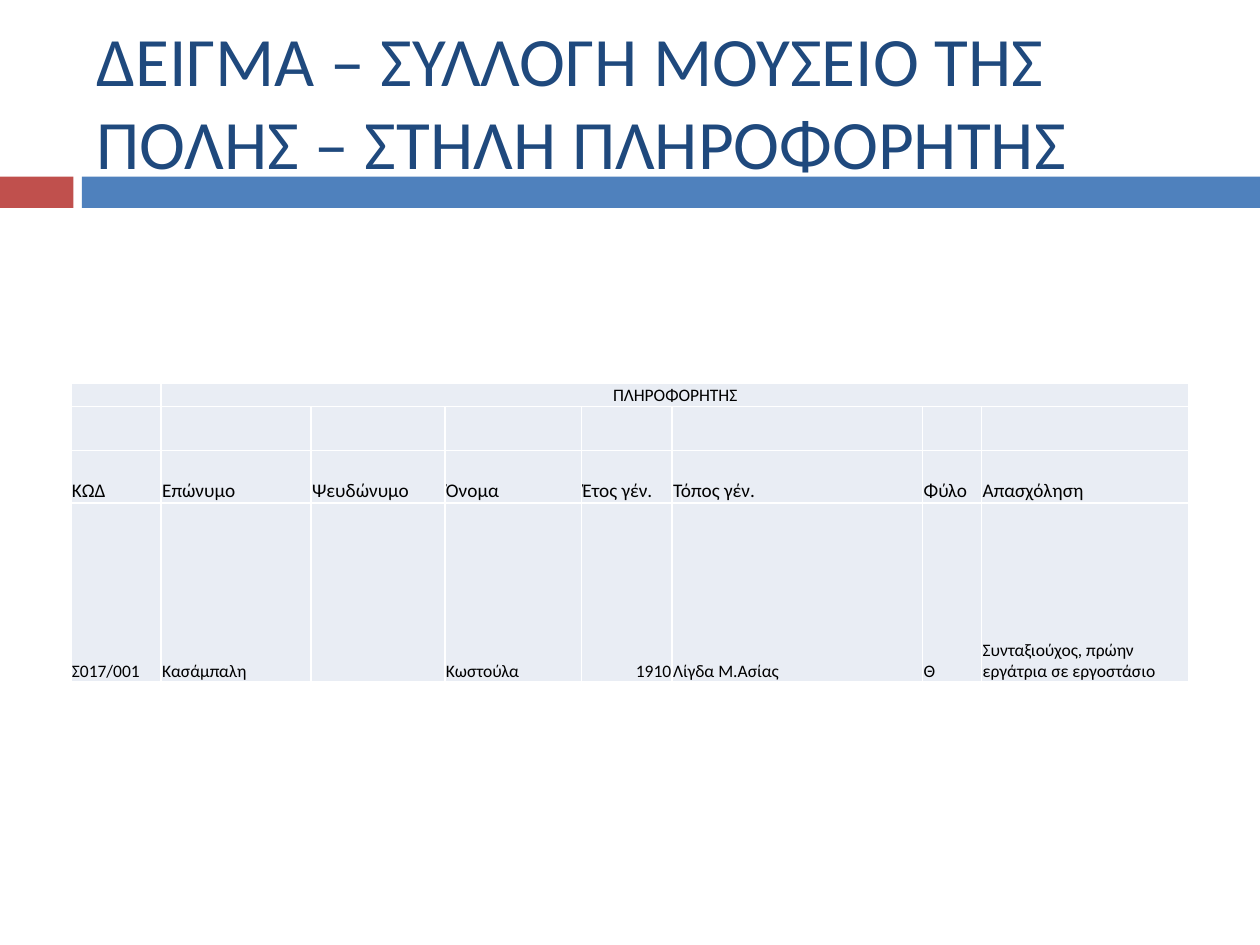
from dataclasses import dataclass

from lxml import etree
from pptx import Presentation
from pptx.dml.color import RGBColor
from pptx.enum.shapes import MSO_SHAPE
from pptx.enum.text import MSO_ANCHOR, MSO_AUTO_SIZE, PP_ALIGN
from pptx.oxml.ns import qn
from pptx.util import Cm, Pt

RECTANGLE = MSO_SHAPE.RECTANGLE
MIDDLE, BOTTOM = MSO_ANCHOR.MIDDLE, MSO_ANCHOR.BOTTOM
LEFT, CENTER, RIGHT = PP_ALIGN.LEFT, PP_ALIGN.CENTER, PP_ALIGN.RIGHT
NO_AUTO_SIZE = MSO_AUTO_SIZE.NONE


@dataclass
class Theme:
    font: str = "Calibri"
    title: str = "1F497D"
    text: str = "000000"
    red: str = "C0504D"
    blue: str = "4F81BD"
    cell: str = "E9EDF4"
    border: str = "FFFFFF"
    title_size: float = 39.6
    header_size: float = 11
    cell_size: float = 10
    border_width: float = 1


theme = Theme()


def format_runs(paragraph, size, color):
    for run in paragraph.runs:
        run.font.name = theme.font
        run.font.size = Pt(size)
        run.font.bold = False
        run.font.color.rgb = RGBColor.from_string(color)


def add_borders(cell):
    properties = cell._tc.get_or_add_tcPr()
    for side in ("a:lnL", "a:lnR", "a:lnT", "a:lnB"):
        line = etree.SubElement(properties, qn(side), w=str(Pt(theme.border_width)))
        fill = etree.SubElement(line, qn("a:solidFill"))
        etree.SubElement(fill, qn("a:srgbClr"), val=theme.border)


presentation = Presentation()
presentation.slide_width = Cm(25.4)
presentation.slide_height = Cm(19.05)
slide = presentation.slides.add_slide(presentation.slide_layouts[5])

# Two-coloured band under the title
for left, width, color in ((0, 1.48, theme.red), (1.65, 23.75, theme.blue)):
    band = slide.shapes.add_shape(RECTANGLE, Cm(left), Cm(3.56), Cm(width), Cm(0.63))
    band.shadow.inherit = False
    band.fill.solid()
    band.fill.fore_color.rgb = RGBColor.from_string(color)
    band.line.fill.background()

# Title
title = slide.shapes.title
title.left, title.top, title.width, title.height = Cm(1.69), Cm(0.64), Cm(22.66), Cm(2.75)
title_frame = title.text_frame
title_frame.text = "ΔΕΙΓΜΑ – ΣΥΛΛΟΓΗ ΜΟΥΣΕΙΟ ΤΗΣ ΠΟΛΗΣ – ΣΤΗΛΗ ΠΛΗΡΟΦΟΡΗΤΗΣ"
title_frame.word_wrap = True
title_frame.auto_size = NO_AUTO_SIZE
title_frame.vertical_anchor = MIDDLE
title_frame.paragraphs[0].alignment = LEFT
format_runs(title_frame.paragraphs[0], theme.title_size, theme.title)

# Informant table
column_widths = (1.82, 3.02, 2.7, 2.75, 1.83, 5.05, 1.19, 4.18)
row_heights = (0.46, 0.89, 1.06, 3.61)
records = (
    ("", "ΠΛΗΡΟΦΟΡΗΤΗΣ", "", "", "", "", "", ""),
    ("",) * len(column_widths),
    ("ΚΩΔ", "Επώνυμο", "Ψευδώνυμο", "Όνομα", "Έτος γέν.", "Τόπος γέν.", "Φύλο", "Απασχόληση"),
    ("Σ017/001", "Κασάμπαλη", "", "Κωστούλα", "1910", "Λίγδα Μ.Ασίας", "Θ",
     "Συνταξιούχος, πρώην εργάτρια σε εργοστάσιο"),
)
HEADER_ROW = 2
table = slide.shapes.add_table(
    len(row_heights), len(column_widths), Cm(1.43), Cm(7.73),
    Cm(sum(column_widths)), Cm(sum(row_heights))).table
table.first_row = False
table.horz_banding = False
for column, width in zip(table.columns, column_widths):
    column.width = Cm(width)
for row, height in zip(table.rows, row_heights):
    row.height = Cm(height)
table.cell(0, 1).merge(table.cell(0, len(column_widths) - 1))

for row_index, record in enumerate(records):
    size = theme.header_size if row_index == HEADER_ROW else theme.cell_size
    for column_index, value in enumerate(record):
        cell = table.cell(row_index, column_index)
        add_borders(cell)
        cell.fill.solid()
        cell.fill.fore_color.rgb = RGBColor.from_string(theme.cell)
        cell.margin_left = cell.margin_right = cell.margin_top = Cm(0.02)
        cell.margin_bottom = 0
        cell.vertical_anchor = BOTTOM
        paragraph = cell.text_frame.paragraphs[0]
        if value:
            paragraph.text = value
            format_runs(paragraph, size, theme.text)
            paragraph.alignment = RIGHT if value.isdigit() else LEFT
        else:
            # Empty cells keep the small type size so rows stay low
            etree.SubElement(paragraph._p, qn("a:endParaRPr"), sz=str(size * 100))
table.cell(0, 1).text_frame.paragraphs[0].alignment = CENTER

presentation.save("out.pptx")
